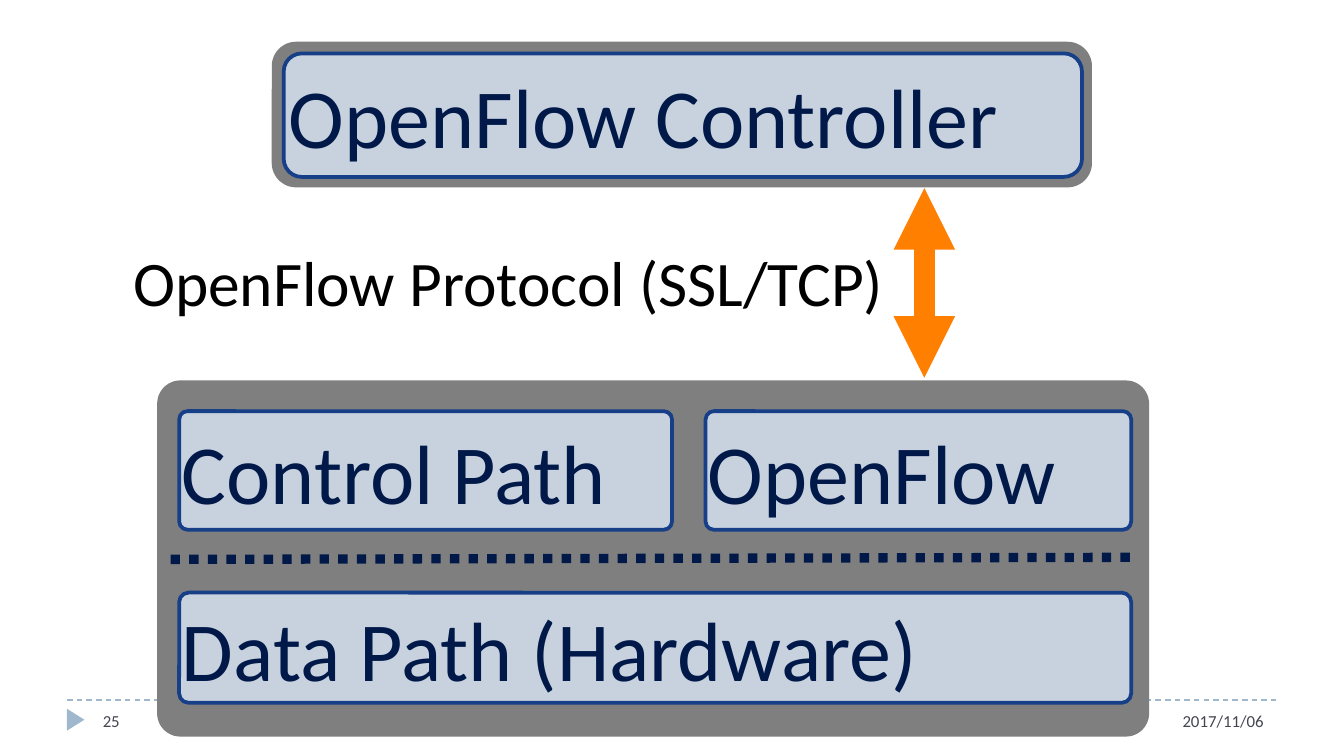
from dataclasses import dataclass

from pptx import Presentation
from pptx.dml.color import RGBColor
from pptx.enum.dml import MSO_LINE as Dash
from pptx.enum.shapes import MSO_CONNECTOR as Connector, MSO_SHAPE as Shape
from pptx.enum.text import MSO_ANCHOR as Anchor, MSO_AUTO_SIZE as AutoSize, PP_ALIGN as Align
from pptx.oxml.ns import qn
from pptx.util import Pt
from lxml.etree import SubElement


@dataclass(frozen=True)
class Theme:
    font: str = "Calibri"
    navy: str = "001949"
    border: str = "163F88"
    panel: str = "C8D2DF"
    gray: str = "7F7F7F"
    orange: str = "FF7F00"
    accent: str = "9FB8CD"
    footer: str = "464653"
    black: str = "000000"
    block_size: float = 45
    label_size: float = 34
    footer_size: float = 9


class Diagram:
    """Draws the parts of a layered block diagram on one slide."""

    def __init__(self, slide, theme):
        self.shapes = slide.shapes
        self.theme = theme

    def add_text(self, frame, text, size, color, align=Align.LEFT, inset=None):
        frame.vertical_anchor = Anchor.MIDDLE
        if inset is not None:
            frame.margin_left = frame.margin_right = Pt(inset)
            frame.margin_top = frame.margin_bottom = Pt(inset)
        paragraph = frame.paragraphs[0]
        paragraph.alignment = align
        run = paragraph.add_run()
        run.text = text
        run.font.name = self.theme.font
        run.font.size = Pt(size)
        run.font.color.rgb = RGBColor.from_string(color)

    def solid(self, kind, box, fill, adjustment):
        shape = self.shapes.add_shape(kind, *map(Pt, box))
        shape.shadow.inherit = False
        shape.adjustments[0] = adjustment
        shape.fill.solid()
        shape.fill.fore_color.rgb = RGBColor.from_string(fill)
        shape.line.fill.background()
        return shape

    def block(self, text, box, rounding):
        block = self.solid(Shape.ROUNDED_RECTANGLE, box, self.theme.panel, rounding)
        block.line.color.rgb = RGBColor.from_string(self.theme.border)
        block.line.width = Pt(2)
        self.add_text(block.text_frame, text, self.theme.block_size, self.theme.navy, inset=0)

    def container(self, box, rounding):
        self.solid(Shape.ROUNDED_RECTANGLE, box, self.theme.gray, rounding)

    def marker(self, box):
        self.solid(Shape.ISOSCELES_TRIANGLE, box, self.theme.accent, 0.5).rotation = 90

    def rule(self, start, end, color, width, dash=None, arrows=False):
        rule = self.shapes.add_connector(Connector.STRAIGHT, *map(Pt, start + end))
        rule.line.color.rgb = RGBColor.from_string(color)
        rule.line.width = Pt(width)
        if dash:
            rule.line.dash_style = dash
        if arrows:
            outline = rule.line._get_or_add_ln()
            for tip in ("a:headEnd", "a:tailEnd"):
                SubElement(outline, qn(tip), type="triangle")
        SubElement(rule._element.spPr, qn("a:effectLst"))

    def label(self, text, box):
        frame = self.shapes.add_textbox(*map(Pt, box)).text_frame
        self.add_text(frame, text, self.theme.label_size, self.theme.black, inset=0)
        frame.word_wrap = False
        frame.auto_size = AutoSize.SHAPE_TO_FIT_TEXT

    def footer(self, text, box, align):
        frame = self.shapes.add_textbox(*map(Pt, box)).text_frame
        frame.word_wrap = True
        self.add_text(frame, text, self.theme.footer_size, self.theme.footer, align)


def main():
    deck = Presentation()
    deck.slide_width, deck.slide_height = Pt(720), Pt(405)
    theme = Theme()
    diagram = Diagram(deck.slides.add_slide(deck.slide_layouts[6]), theme)

    footer_top = 375.1
    diagram.rule((36, footer_top), (684, footer_top), theme.accent, 0.75, Dash.DASH)
    diagram.marker((34.6, 380.9, 11.8, 9.4))
    diagram.footer("2017/11/06", (564, footer_top, 120, 21.6), Align.RIGHT)
    diagram.footer("25", (48, footer_top, 78, 21.6), Align.LEFT)

    left, right, path_top, path_height = 96, 606, 220.3, 63.5
    control_width, openflow_width = 264, 228
    diagram.container((84.2, 203.8, 531.4, 190.8), 0.065)
    diagram.block("Data Path (Hardware)", (left, 317.5, right - left, 59), 0.085)
    diagram.rule((91.4, 299.7), (606.2, 298.6), theme.navy, 5, Dash.ROUND_DOT)
    diagram.block("Control Path", (left, path_top, control_width, path_height), 0.069)
    diagram.block("OpenFlow", (right - openflow_width, path_top, openflow_width, path_height), 0.069)

    diagram.container((145.6, 22.4, 439.4, 78), 0.167)
    diagram.block("OpenFlow Controller", (152, 28.6, 427.7, 66.2), 0.147)
    diagram.rule((495.2, 100.8), (495.2, 202.4), theme.orange, 11, arrows=True)
    diagram.label("OpenFlow Protocol (SSL/TCP)", (71.3, 130.3, 406.8, 41))

    deck.save("out.pptx")


if __name__ == "__main__":
    main()
